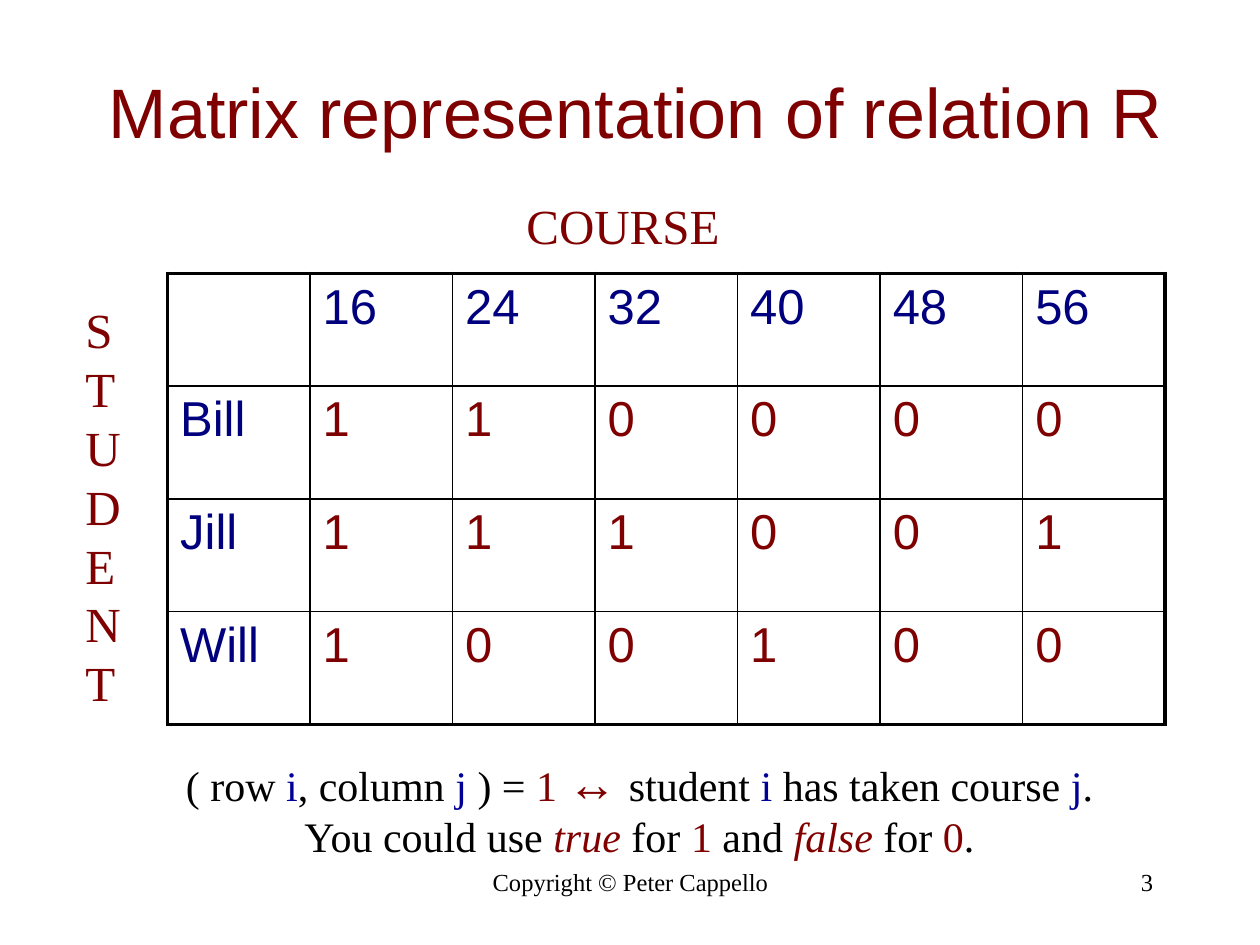
from lxml import etree
from pptx import Presentation
from pptx.dml.color import RGBColor
from pptx.enum import text
from pptx.oxml import ns
from pptx.util import Inches, Pt

BLACK = RGBColor(0x00, 0x00, 0x00)
MAROON = RGBColor(0x7F, 0x00, 0x00)
DARK_RED = RGBColor(0x80, 0x00, 0x00)
NAVY = RGBColor(0x00, 0x00, 0x7F)
BLUE = RGBColor(0x00, 0x00, 0x99)
SANS, SERIF = "Arial", "Times New Roman"
LEFT, CENTER, RIGHT = (text.PP_ALIGN.LEFT, text.PP_ALIGN.CENTER,
                       text.PP_ALIGN.RIGHT)

TITLE = "Matrix representation of relation R"
MATRIX = [
    ["", "16", "24", "32", "40", "48", "56"],
    ["Bill", "1", "1", "0", "0", "0", "0"],
    ["Jill", "1", "1", "1", "0", "0", "1"],
    ["Will", "1", "0", "0", "1", "0", "0"],
]
VARIABLE = {"color": BLUE}
VALUE = {"color": DARK_RED}
KEYWORD = {"color": DARK_RED, "italic": True}
EXPLANATION = [
    [("( row ", {}), ("i", VARIABLE), (", column ", {}), ("j ", VARIABLE),
     (") = ", {}), ("1 ", {"color": MAROON}),
     ("↔ ", {"color": MAROON, "size": 28}), ("student ", {}),
     ("i", VARIABLE), (" has taken course ", {}), ("j", VARIABLE), (".", {})],
    [("You could use ", {}), ("true", KEYWORD), (" for ", {}), ("1", VALUE),
     (" and ", {}), ("false", KEYWORD), (" for ", {}), ("0", VALUE),
     (".", {})],
]
# lines, (left, top, width, height), format
LABELS = [
    (["Copyright © Peter Cappello"], (3.42, 6.83, 3.17, 0.5),
     {"size": 14, "align": CENTER}),
    (["3"], (7.17, 6.83, 2.08, 0.5), {"size": 14, "align": RIGHT}),
    (["COURSE"], (4.08, 1.5, 1.74, 0.57),
     {"size": 28, "color": MAROON, "wrap": False}),
    (list("STUDENT"), (0.58, 2.33, 0.48, 3.37),
     {"size": 28, "color": MAROON, "wrap": False}),
    (EXPLANATION, (1.33, 5.92, 7.49, 0.98),
     {"size": 24, "align": CENTER, "wrap": False}),
]
TABLE_BOX = (1.33, 2.17, 7.92, 3.58)
INNER_LINE, OUTER_LINE = 1, 2.25


def write(frame, lines, size, font=SERIF, color=BLACK, align=LEFT, wrap=True):
    """Fill a text frame; a line is a string or a list of (text, format)."""
    frame.word_wrap = wrap
    for index, line in enumerate(lines):
        paragraph = frame.paragraphs[0] if index == 0 else frame.add_paragraph()
        paragraph.alignment = align
        pieces = [(line, {})] if isinstance(line, str) else line
        for words, style in pieces:
            run = paragraph.add_run()
            run.text = words
            run.font.name = font
            run.font.size = Pt(style.get("size", size))
            run.font.color.rgb = style.get("color", color)
            run.font.italic = style.get("italic", False)


def set_borders(cell, widths):
    properties = cell._tc.get_or_add_tcPr()
    for index, (side, width) in enumerate(widths.items()):
        line = etree.Element(ns.qn(f"a:ln{side}"), w=str(Pt(width)))
        fill = etree.SubElement(line, ns.qn("a:solidFill"))
        etree.SubElement(fill, ns.qn("a:srgbClr"), val=str(BLACK))
        properties.insert(index, line)


def add_matrix(slide):
    row_count, column_count = len(MATRIX), len(MATRIX[0])
    left, top, width, height = map(Inches, TABLE_BOX)
    table = slide.shapes.add_table(row_count, column_count, left, top,
                                   width, height).table
    table.first_row = table.horz_banding = False
    for r, row in enumerate(MATRIX):
        for c, value in enumerate(row):
            cell = table.cell(r, c)
            cell.fill.background()
            is_header = r == 0 or c == 0
            write(cell.text_frame, [value], 28, font=SANS,
                  color=NAVY if is_header else MAROON)
            on_edge = {"L": c == 0, "R": c == column_count - 1,
                       "T": r == 0, "B": r == row_count - 1}
            set_borders(cell, {side: OUTER_LINE if edge else INNER_LINE
                               for side, edge in on_edge.items()})


def main():
    presentation = Presentation()
    presentation.slide_width = Inches(10)
    presentation.slide_height = Inches(7.5)
    slide = presentation.slides.add_slide(presentation.slide_layouts[5])

    title = slide.shapes.title
    title.left, title.top, title.width, title.height = map(
        Inches, (0.67, 0.25, 8.75, 1.25))
    title.text_frame.vertical_anchor = text.MSO_ANCHOR.MIDDLE
    write(title.text_frame, [TITLE], 40, font=SANS, color=MAROON, align=CENTER)

    add_matrix(slide)
    for lines, box, style in LABELS:
        label = slide.shapes.add_textbox(*map(Inches, box))
        write(label.text_frame, lines, **style)

    presentation.save("out.pptx")


if __name__ == "__main__":
    main()
